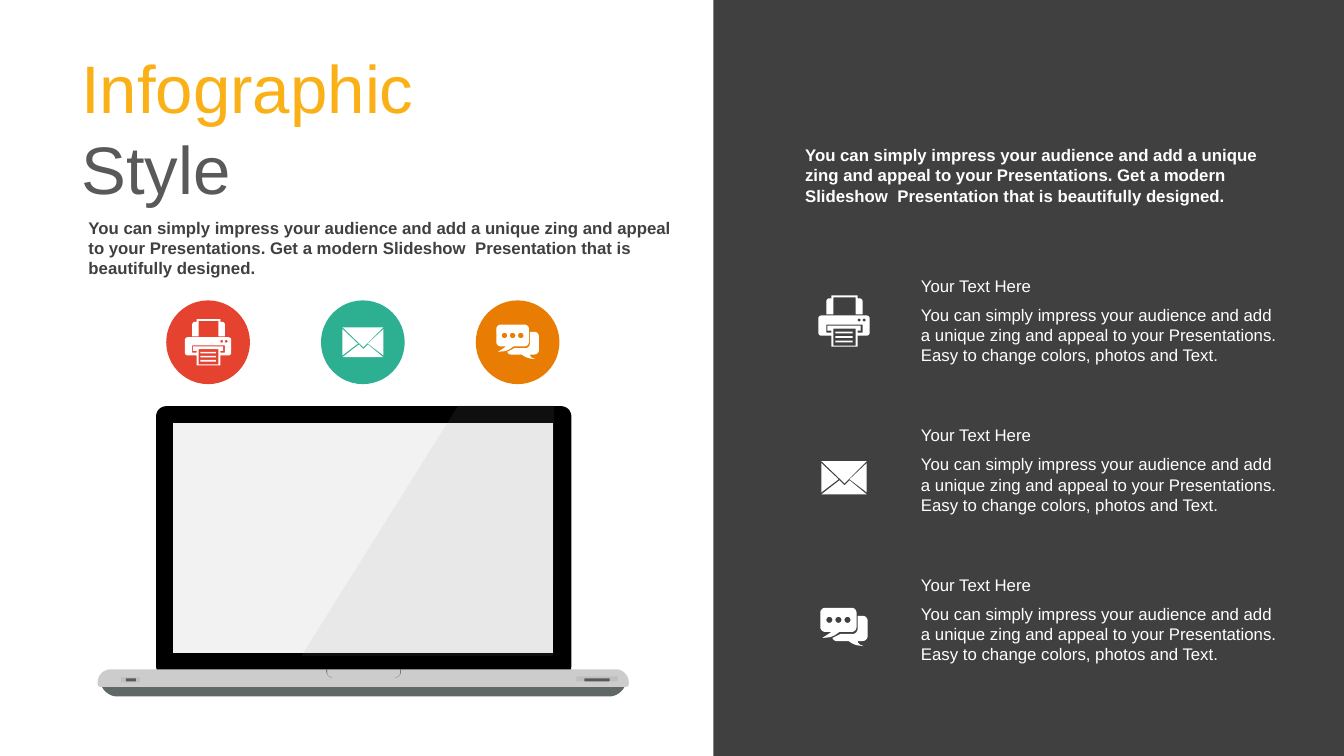
from dataclasses import dataclass

from lxml.etree import SubElement
from pptx import Presentation
from pptx.dml.color import RGBColor
from pptx.enum.shapes import MSO_SHAPE
from pptx.enum.text import MSO_ANCHOR
from pptx.oxml.ns import qn
from pptx.util import Cm, Pt


@dataclass(frozen=True)
class Theme:
    """Colours, font and type sizes of the slide."""
    font: str = "Arial"
    title: int = 48
    body: int = 12
    yellow: str = "FAB117"
    red: str = "E64230"
    green: str = "2CB091"
    orange: str = "E97D03"
    dark: str = "404040"
    grey: str = "595959"
    white: str = "FFFFFF"
    lid: str = "000000"
    screen: str = "F2F2F2"
    base: str = "CCCCCC"
    foot: str = "5F6767"
    notch: str = "4D4D4D"
    port: str = "BFBFBF"
    glare: str = "999999"


@dataclass(frozen=True)
class Icon:
    """An outline drawn on a grid, its badge colour and its drop in a row."""
    width: int
    height: int
    contours: list
    colour: str
    drop: float


def rect(x, y, w, h, r=0):
    """Return the corners of a rectangle, each with a radius."""
    return [(x, y, r), (x + w, y, r), (x + w, y + h, r), (x, y + h, r)]


def dot(cx, cy, r):
    """Return a circle as a fully rounded square."""
    return rect(cx - r, cy - r, 2 * r, 2 * r, r)


T = Theme()
UNIT = Cm(2.54) / 100
INTRO = ("You can simply impress your audience and add a unique zing and appeal to your "
         "Presentations. Get a modern Slideshow  Presentation that is beautifully designed.")
ROW_HEAD = "Your Text Here"
ROW_BODY = ("You can simply impress your audience and add a unique zing and appeal to your "
            "Presentations. Easy to change colors, photos and Text.")

PRINTER = Icon(51, 51, [
    [(0, 20, 3), (51, 20, 3), (51, 40, 3), (39, 40), (39, 51), (13, 51), (13, 40), (0, 40, 3)],
    [(13, 0), (39, 0), (39, 3), (44, 3, 3), (44, 19), (37, 19), (37, 2), (15, 2),
     (15, 19), (8, 19), (8, 3, 3), (13, 3)],
    [(8, 29), (44, 29), (44, 37), (39, 37), (39, 35), (42, 35), (42, 30), (9, 30),
     (9, 35), (13, 35), (13, 37), (8, 37)],
    rect(15, 33, 22, 17), dot(45.5, 24.5, 1.5), dot(40.5, 24.5, 1.5),
    *[rect(17, y, 17, 1.8) for y in (36, 40.5, 45)],
], T.red, 1.28)
ENVELOPE = Icon(45, 33, [
    [(28, 19), (45, 33), (0, 33), (18, 19), (23, 24)],
    [(45, 2), (45, 31), (28, 18)],
    [(0, 2), (17, 18), (0, 31)],
    [(0, 0), (45, 0), (23, 22)],
], T.green, 1.46)
CHAT = Icon(47, 39, [
    [(0, 0, 5), (36, 0, 5), (36, 24, 5), (19, 24), (12, 29, 4), (2, 30), (11, 24), (0, 24, 5)],
    [(37, 8), (47, 8, 5), (47, 33, 5), (37, 33), (38, 36, 2), (43, 38), (34, 37, 4),
     (28, 33), (14, 33, 2), (12, 30), (20, 26), (37, 26, 5)],
    *[dot(x, 12, 3) for x in (9, 18, 27)],
], T.orange, 1.46)
ICONS = [PRINTER, ENVELOPE, CHAT]


def paint(sp, colour):
    """Give a shape a plain fill with no line or shadow."""
    sp.shadow.inherit = False
    sp.fill.solid()
    sp.fill.fore_color.rgb = RGBColor.from_string(colour)
    sp.line.fill.background()
    return sp


def add_preset(s, kind, x, y, w, h, colour):
    """Add a filled preset shape."""
    return paint(s.shapes.add_shape(kind, int(x), int(y), int(w), int(h)), colour)


def toward(a, b, r):
    """Return the point at distance r from a on the way to b."""
    length = ((b[0] - a[0]) ** 2 + (b[1] - a[1]) ** 2) ** 0.5
    return tuple(a[i] + (b[i] - a[i]) * r / length for i in (0, 1))


def smooth(contour, steps=8):
    """Turn corners with a radius into short arcs."""
    points = []
    for i, (x, y, *radius) in enumerate(contour):
        if not radius or not radius[0]:
            points.append((x, y))
            continue
        start = toward((x, y), contour[i - 1], radius[0])
        end = toward((x, y), contour[(i + 1) % len(contour)], radius[0])
        c1, c2 = [tuple(p[j] + 0.55 * ((x, y)[j] - p[j]) for j in (0, 1)) for p in (start, end)]
        for t in [n / steps for n in range(steps + 1)]:
            weights = ((1 - t) ** 3, 3 * t * (1 - t) ** 2, 3 * t * t * (1 - t), t ** 3)
            points.append(tuple(sum(w * p[j] for w, p in zip(weights, (start, c1, c2, end)))
                                for j in (0, 1)))
    return points


def add_outline(s, x, y, contours, colour, scale=1):
    """Add one freeform made of several contours on the unit grid."""
    paths = [[(int(x + px * UNIT * scale), int(y + py * UNIT * scale))
              for px, py in smooth(contour)] for contour in contours]
    builder = s.shapes.build_freeform(*paths[0][0])
    builder.add_line_segments(paths[0][1:], close=True)
    for points in paths[1:]:
        builder.move_to(*points[0])
        builder.add_line_segments(points[1:], close=True)
    return paint(builder.convert_to_shape(), colour)


def add_icon(s, icon, cx, cy, scale=1):
    """Draw a white icon centred on a point."""
    half = UNIT * scale / 2
    add_outline(s, cx - icon.width * half, cy - icon.height * half, icon.contours, T.white, scale)


def add_text(s, x, y, w, h, runs, size=T.body, bold=False, anchor=MSO_ANCHOR.TOP):
    """Add a wrapped text box from (text, colour) runs."""
    tf = s.shapes.add_textbox(int(x), int(y), int(w), int(h)).text_frame
    tf.word_wrap = True
    tf.vertical_anchor = anchor
    p = tf.paragraphs[0]
    for text, colour in runs:
        r = p.add_run()
        r.text = text
        r.font.name, r.font.size, r.font.bold = T.font, Pt(size), bold
        r.font.color.rgb = RGBColor.from_string(colour)


def add_laptop(s, x, y):
    """Draw the laptop from its top left corner."""
    add_outline(s, x, y, [[(5, 276, 2), (526, 276, 2), (522, 289, 12), (9, 289, 12)]], T.foot)
    add_outline(s, x, y, [rect(60, 1, 412, 268, 10)], T.lid)
    add_outline(s, x, y, [rect(77, 18, 377, 228)], T.screen)
    add_outline(s, x, y, [[(2, 262, 13), (529, 262, 13), (529, 279.5, 3), (2, 279.5, 3)]], T.base)
    hook = [(229, 262), (229, 270, 6), (234, 270), (229.7, 269.4, 4), (229.7, 262)]
    mirrored = [(532 - px, *rest) for px, *rest in hook]
    add_outline(s, x, y, [hook, mirrored], T.notch)
    for left, top, w, h, colour in [(25, 270, 19, 5, T.port), (30, 271, 10, 3, T.grey),
                                    (477, 269, 41, 5, T.port), (485, 271, 25, 3, T.grey)]:
        add_preset(s, MSO_SHAPE.ROUNDED_RECTANGLE, x + left * UNIT, y + top * UNIT,
                   w * UNIT, h * UNIT, colour)
    sp = add_outline(s, x, y, [[(360, 0), (455, 0), (454, 249), (204, 249)]], T.glare)
    SubElement(sp.element.find(".//" + qn("a:srgbClr")), qn("a:alpha"), val="10000")


def add_badges(s, x, y, size, pitch):
    """Draw a row of coloured circles with icons."""
    for i, icon in enumerate(ICONS):
        left = x + i * pitch
        add_preset(s, MSO_SHAPE.OVAL, left, y, size, size, icon.colour)
        add_icon(s, icon, left + size / 2, y + size / 2, 0.9)


def add_left_side(s, x, y):
    """Place the title, introduction, badges and laptop."""
    add_text(s, x, y, Cm(9.17), Cm(4.37),
             [("Infographic ", T.yellow), ("Style", T.grey)], T.title)
    add_text(s, x + Cm(0.18), y + Cm(4.32), Cm(15.27), Cm(1.8), [(INTRO, T.dark)], bold=True)
    add_badges(s, x + Cm(2.39), y + Cm(6.53), Cm(2.11), Cm(3.9))
    add_laptop(s, x + Cm(0.61), y + Cm(9.17))


def add_panel(s, x, y, w, h):
    """Place the dark panel with its introduction and icon rows."""
    add_preset(s, MSO_SHAPE.RECTANGLE, x, y, w, h, T.dark)
    add_text(s, x + Cm(2.06), y + Cm(3.53), Cm(11.94), Cm(1.8), [(INTRO, T.white)], bold=True)
    for i, icon in enumerate(ICONS):
        top = y + Cm(6.81) + i * Cm(3.77)
        add_icon(s, icon, x + Cm(3.29), top + Cm(icon.drop))
        left = x + Cm(4.98)
        add_text(s, left, top, Cm(9.5), Cm(0.76), [(ROW_HEAD, T.white)], anchor=MSO_ANCHOR.MIDDLE)
        add_text(s, left, top + Cm(0.74), Cm(9.5), Cm(1.8), [(ROW_BODY, T.white)])


def main():
    """Build and save the slide."""
    prs = Presentation()
    prs.slide_width, prs.slide_height = Cm(33.87), Cm(19.05)
    s = prs.slides.add_slide(prs.slide_layouts[6])
    add_left_side(s, Cm(1.8), Cm(1.04))
    add_panel(s, Cm(17.98), 0, Cm(15.89), prs.slide_height)
    prs.save("out.pptx")


if __name__ == "__main__":
    main()
